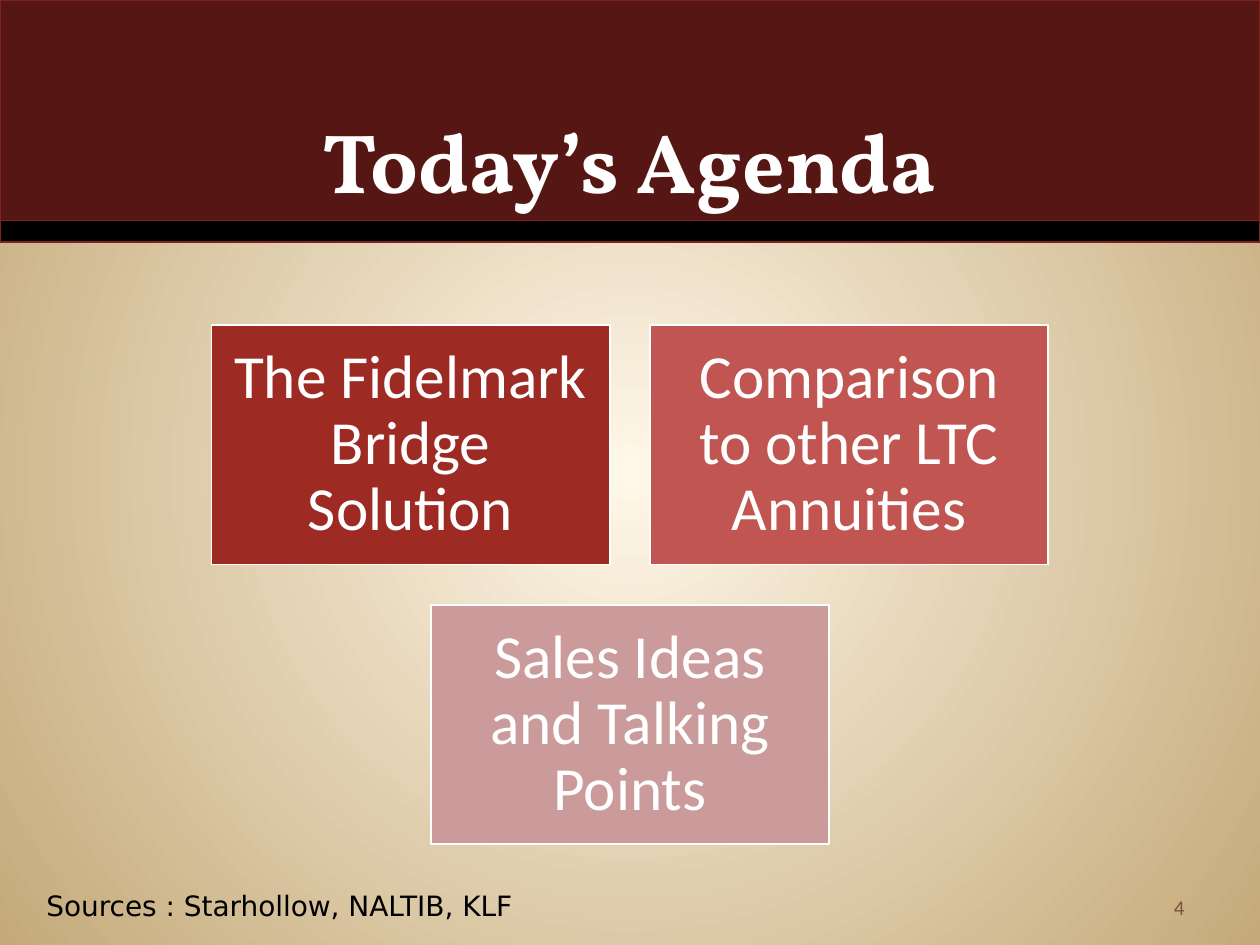
from lxml import etree
from pptx import Presentation
from pptx import util as u
from pptx.dml import color
from pptx.enum import shapes, text
from pptx.oxml import ns

COLORS = {
    "glow": "FFF7E8",
    "sand": "C4AA7A",
    "black": "000000",
    "white": "FFFFFF",
    "maroon": "561714",
    "edge": "80221D",
    "brown": "795339",
    "brick": "9D2A23",
    "coral": "C15551",
    "rose": "CA9B9A",
}
AGENDA = [
    [("The Fidelmark Bridge Solution", "brick"), ("Comparison to other LTC Annuities", "coral")],
    [("Sales Ideas and Talking Points", "rose")],
]


def rgb(name):
    return color.RGBColor.from_string(COLORS[name])


def paint_background(page):
    fill = page.background.fill
    fill.gradient()
    for stop, name in zip(fill.gradient_stops, ("glow", "sand")):
        stop.color.rgb = rgb(name)
    stops = page.element.find(".//" + ns.qn("a:gsLst"))
    gradient = stops.getparent()
    gradient.remove(gradient.find(ns.qn("a:lin")))
    circle = etree.Element(ns.qn("a:path"), {"path": "circle"})
    etree.SubElement(circle, ns.qn("a:fillToRect"), {side: "50000" for side in "ltrb"})
    stops.addnext(circle)


def add_box(page, left, top, width, height, fill, line):
    box = page.shapes.add_shape(
        shapes.MSO_SHAPE.RECTANGLE, u.Inches(left), u.Inches(top), u.Inches(width), u.Inches(height)
    )
    box.shadow.inherit = False
    box.fill.solid()
    box.fill.fore_color.rgb = rgb(fill)
    box.line.color.rgb = rgb(line)
    box.line.width = u.Pt(1)
    return box


def add_label(page, left, top, width, height):
    return page.shapes.add_textbox(u.Inches(left), u.Inches(top), u.Inches(width), u.Inches(height))


def write(box, words, size, font, ink, align, anchor, bold=False, wrap=True):
    frame = box.text_frame
    frame.text = words
    frame.word_wrap = wrap
    frame.vertical_anchor = anchor
    para = frame.paragraphs[0]
    para.alignment = align
    span = para.runs[0]
    span.font.size = u.Pt(size)
    span.font.name = font
    span.font.bold = bold
    span.font.color.rgb = rgb(ink)
    return frame


def add_header(page, left, top, width, height):
    band = 0.25
    add_box(page, left, top + height - band, width, band, "black", "edge")
    add_box(page, left, top, width, 1.75, "maroon", "edge")
    title = add_label(page, left + 0.33, top + 0.14, width - 0.67, 1.58)
    write(title, "Today’s Agenda", 48, "Vollkorn", "white",
          text.PP_ALIGN.CENTER, text.MSO_ANCHOR.BOTTOM, bold=True)


def add_agenda(page, left, top, width, height):
    gap = 0.32
    card_width = (width - gap) / 2
    card_height = (height - gap) / 2
    for row, cards in enumerate(AGENDA):
        row_width = len(cards) * (card_width + gap) - gap
        start = left + (width - row_width) / 2
        for column, (words, fill) in enumerate(cards):
            card = add_box(page, start + column * (card_width + gap), top + row * (card_height + gap),
                           card_width, card_height, fill, "white")
            frame = write(card, words, 35, "Calibri", "white",
                          text.PP_ALIGN.CENTER, text.MSO_ANCHOR.MIDDLE)
            frame.margin_left = frame.margin_right = u.Inches(0.15)
            frame.margin_top = frame.margin_bottom = u.Inches(0.15)
            frame.paragraphs[0].line_spacing = 0.9


def add_footer(page, left, top, width, height):
    number = add_label(page, left + width - 2.33, top, 2.33, height)
    write(number, "4", 12, "Calibri", "brown", text.PP_ALIGN.RIGHT, text.MSO_ANCHOR.BOTTOM)
    sources = add_label(page, left, top + 0.17, 4.31, 0.37)
    frame = write(sources, "Sources : Starhollow, NALTIB, KLF", 16, "DejaVu Sans", "black",
                  text.PP_ALIGN.LEFT, text.MSO_ANCHOR.TOP, wrap=False)
    frame.auto_size = text.MSO_AUTO_SIZE.SHAPE_TO_FIT_TEXT


def main():
    deck = Presentation()
    deck.slide_width = u.Inches(10)
    deck.slide_height = u.Inches(7.5)
    page = deck.slides.add_slide(deck.slide_layouts[6])
    paint_background(page)
    add_header(page, 0, 0, 10, 1.92)
    add_agenda(page, 1.68, 2.58, 6.64, 4.12)
    add_footer(page, 0.27, 6.83, 9.23, 0.52)
    deck.save("out.pptx")


if __name__ == "__main__":
    main()
